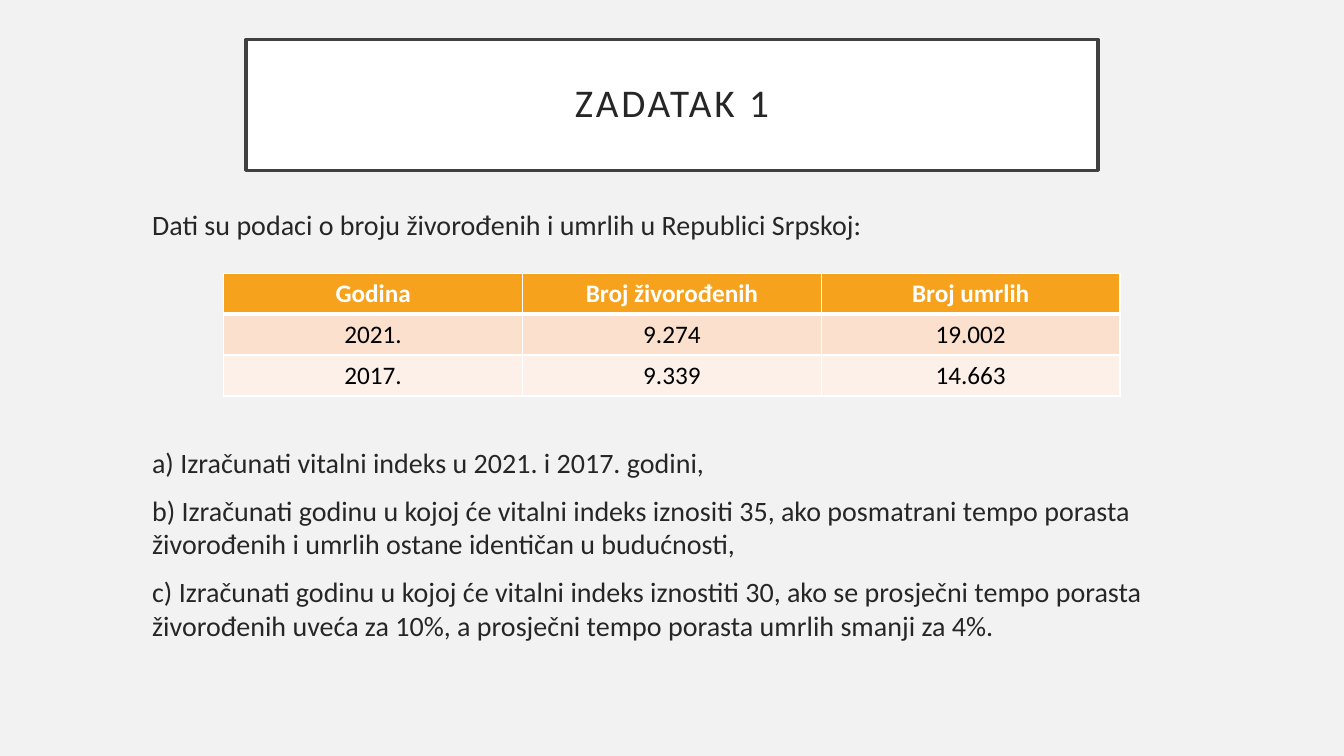
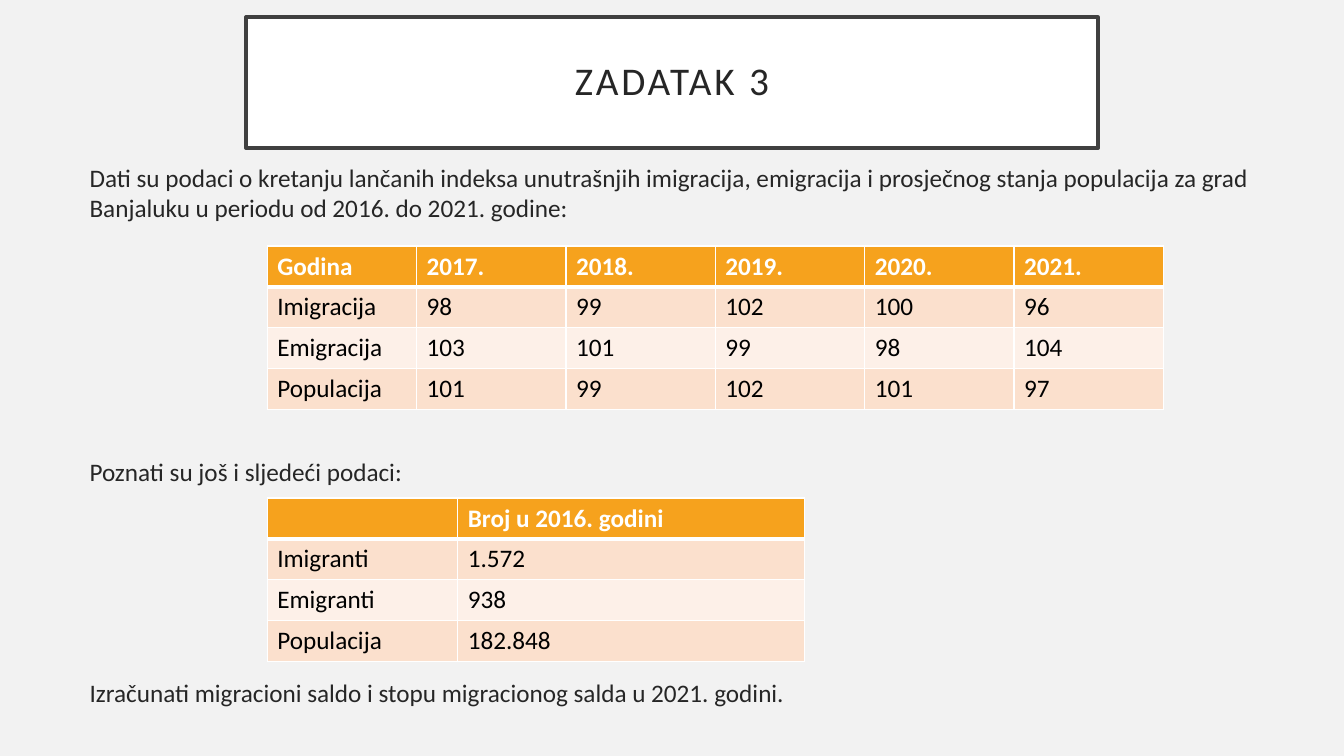
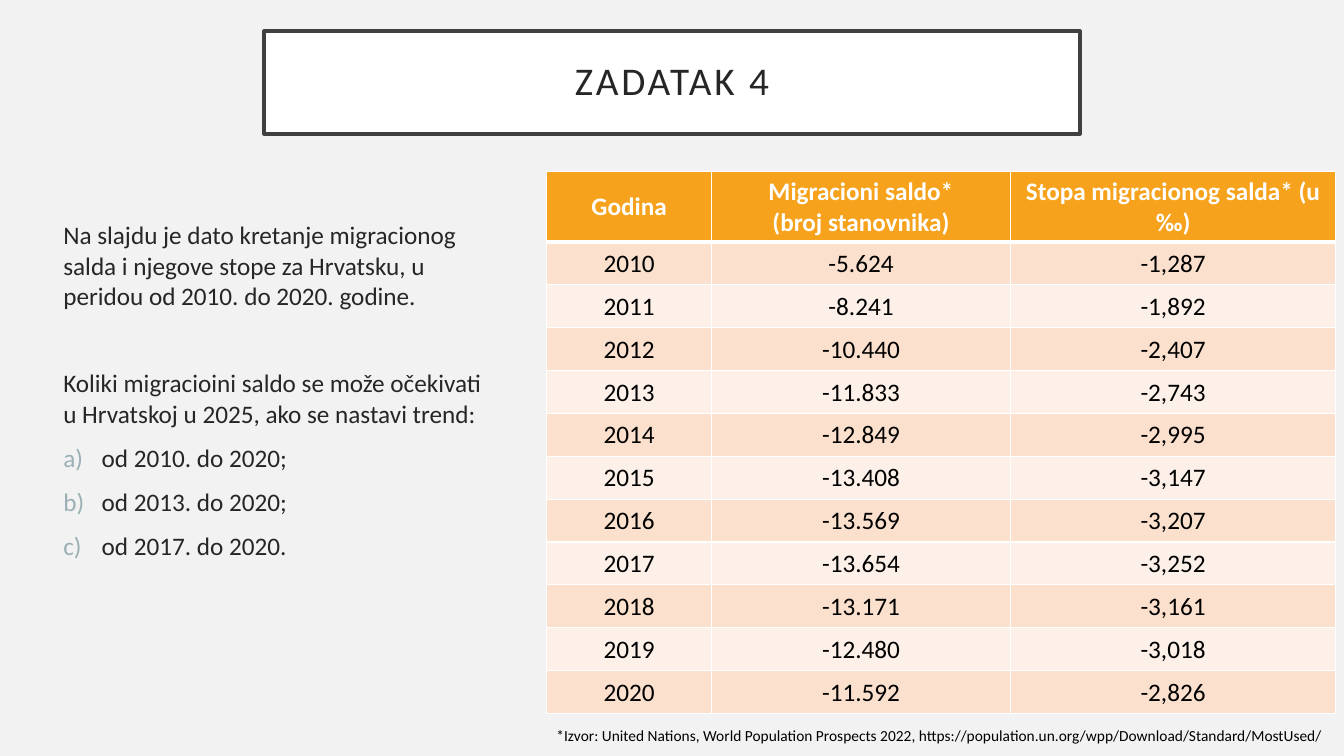
import pptx
import pptx.dml.color
import pptx.enum.shapes
import pptx.enum.text
import pptx.oxml.ns
import pptx.util
from dataclasses import dataclass
from lxml import etree

Inches = pptx.util.Inches
Pt = pptx.util.Pt
ALIGN = pptx.enum.text.PP_ALIGN
ANCHOR = pptx.enum.text.MSO_ANCHOR


@dataclass(frozen=True)
class Theme:
    font: str = "Calibri"
    background: str = "F2F2F2"
    white: str = "FFFFFF"
    frame: str = "404040"
    ink: str = "262626"
    black: str = "000000"
    marker: str = "9BAFB5"
    header: str = "F6A21D"
    bands: tuple = ("FBE0CD", "FDF0E8")
    title_size: int = 28
    large_size: int = 20
    text_size: int = 18
    note_size: int = 11
    gap: int = 10
    indent: float = 0.38
    cell_insets: tuple = (0.1, 0.05, 0.1, 0.05)
    tight_insets: tuple = (0.01, 0.01, 0.01, 0)


THEME = Theme()

TASKS = [
    {
        "title": ("ZADATAK 1", (2.44, 0.39, 8.45, 1.3)),
        "body": {
            "box": (1.41, 2.01, 10.52, 5.1),
            "size": THEME.large_size,
            "lines": [
                ("Dati su podaci o broju živorođenih i umrlih u Republici Srpskoj:", {}),
                ("a) Izračunati vitalni indeks u 2021. i 2017. godini,", {"before": 146}),
                ("b) Izračunati godinu u kojoj će vitalni indeks iznositi 35, ako posmatrani "
                 "tempo porasta živorođenih i umrlih ostane identičan u budućnosti,", {}),
                ("c) Izračunati godinu u kojoj će vitalni indeks iznostiti 30, ako se prosječni "
                 "tempo porasta živorođenih uveća za 10%, a prosječni tempo porasta umrlih "
                 "smanji za 4%.", {}),
            ],
        },
        "tables": [
            {
                "corner": (2.22, 2.71),
                "columns": [8.89 / 3] * 3,
                "height": 1.22,
                "align": ALIGN.CENTER,
                "rows": [
                    ("Godina", "Broj živorođenih", "Broj umrlih"),
                    ("2021.", "9.274", "19.002"),
                    ("2017.", "9.339", "14.663"),
                ],
            },
        ],
    },
    {
        "title": ("ZADATAK 3", (2.44, 0.17, 8.45, 1.3)),
        "body": {
            "box": (0.79, 1.56, 12.13, 5.58),
            "size": THEME.text_size,
            "lines": [
                ("Dati su podaci o kretanju lančanih indeksa unutrašnjih imigracija, emigracija "
                 "i prosječnog stanja populacija za grad Banjaluku u periodu od 2016. do 2021. "
                 "godine:", {}),
                ("Poznati su još i sljedeći podaci:", {"before": 167}),
                ("Izračunati migracioni saldo i stopu migracionog salda u 2021. godini.",
                 {"before": 136}),
            ],
        },
        "tables": [
            {
                "corner": (2.65, 2.44),
                "columns": [8.89 / 6] * 6,
                "height": 1.62,
                "rows": [
                    ("Godina", "2017.", "2018.", "2019.", "2020.", "2021."),
                    ("Imigracija", "98", "99", "102", "100", "96"),
                    ("Emigracija", "103", "101", "99", "98", "104"),
                    ("Populacija", "101", "99", "102", "101", "97"),
                ],
            },
            {
                "corner": (2.65, 4.94),
                "columns": [1.89, 3.44],
                "height": 1.62,
                "rows": [
                    ("", "Broj u 2016. godini"),
                    ("Imigranti", "1.572"),
                    ("Emigranti", "938"),
                    ("Populacija", "182.848"),
                ],
            },
        ],
    },
    {
        "title": ("ZADATAK 4", (2.62, 0.31, 8.09, 1.02)),
        "body": {
            "box": (0.53, 2.13, 4.53, 4.94),
            "size": THEME.text_size,
            "lines": [
                ("Na slajdu je dato kretanje migracionog salda i njegove stope za Hrvatsku, "
                 "u peridou od 2010. do 2020. godine.", {}),
                ("Koliki migracioini saldo se može očekivati u Hrvatskoj u 2025, ako se nastavi "
                 "trend:", {"before": 41}),
                ("od 2010. do 2020;", {"lettered": True}),
                ("od 2013. do 2020;", {"lettered": True}),
                ("od 2017. do 2020.", {"lettered": True}),
            ],
        },
        "tables": [
            {
                "corner": (5.42, 1.7),
                "columns": [1.64, 2.96, 3.23],
                "height": 5.38,
                "header_height": 0.7,
                "align": ALIGN.CENTER,
                "anchor": ANCHOR.MIDDLE,
                "insets": THEME.tight_insets,
                "rows": [
                    ("Godina", "Migracioni saldo*\n(broj stanovnika)",
                     "Stopa migracionog salda* (u ‰)"),
                    ("2010", "-5.624", "-1,287"),
                    ("2011", "-8.241", "-1,892"),
                    ("2012", "-10.440", "-2,407"),
                    ("2013", "-11.833", "-2,743"),
                    ("2014", "-12.849", "-2,995"),
                    ("2015", "-13.408", "-3,147"),
                    ("2016", "-13.569", "-3,207"),
                    ("2017", "-13.654", "-3,252"),
                    ("2018", "-13.171", "-3,161"),
                    ("2019", "-12.480", "-3,018"),
                    ("2020", "-11.592", "-2,826"),
                ],
            },
        ],
        "source": ("*Izvor: United Nations, World Population Prospects 2022, "
                   "https://population.un.org/wpp/Download/Standard/MostUsed/",
                   (5.42, 7.15, 7.82, 0.3)),
    },
]


def rgb(value):
    return pptx.dml.color.RGBColor.from_string(value)


def inches(values):
    return [Inches(value) for value in values]


def apply(target, values):
    for name, value in values.items():
        setattr(target, name, value)


def set_insets(target, insets):
    sides = ("margin_left", "margin_top", "margin_right", "margin_bottom")
    apply(target, dict(zip(sides, inches(insets))))


def paint(target, color):
    target.fill.solid()
    target.fill.fore_color.rgb = rgb(color)


def sub(parent, tag, **attributes):
    return etree.SubElement(parent, pptx.oxml.ns.qn(tag), attributes)


def write(paragraph, text, size, color, bold=False, **layout):
    apply(paragraph, layout)
    if not text:
        return None
    run = paragraph.add_run()
    run.text = text
    apply(run.font, {"name": THEME.font, "size": Pt(size), "bold": bold})
    run.font.color.rgb = rgb(color)
    return run


def paragraphs(frame, count):
    return [frame.paragraphs[0]] + [frame.add_paragraph() for _ in range(count - 1)]


def add_title(slide, text, box):
    title = slide.shapes.add_shape(pptx.enum.shapes.MSO_SHAPE.RECTANGLE, *inches(box))
    title.shadow.inherit = False
    paint(title, THEME.white)
    title.line.color.rgb = rgb(THEME.frame)
    title.line.width = Pt(2.5)
    frame = title.text_frame
    apply(frame, {"word_wrap": True, "vertical_anchor": ANCHOR.MIDDLE})
    set_insets(frame, (0.2,) * 4)
    run = write(frame.paragraphs[0], text, THEME.title_size, THEME.ink,
                alignment=ALIGN.CENTER, line_spacing=0.9)
    run._r.get_or_add_rPr().set("spc", "200")


def add_letter(paragraph):
    properties = paragraph._p.get_or_add_pPr()
    properties.set("marL", str(Inches(THEME.indent)))
    properties.set("indent", str(-Inches(THEME.indent)))
    sub(sub(properties, "a:buClr"), "a:srgbClr", val=THEME.marker)
    sub(properties, "a:buAutoNum", type="alphaLcParenR")


def add_body(slide, box, size, lines):
    frame = slide.shapes.add_textbox(*inches(box)).text_frame
    frame.word_wrap = True
    for paragraph, (text, style) in zip(paragraphs(frame, len(lines)), lines):
        write(paragraph, text, size, THEME.ink,
              space_before=Pt(style.get("before", THEME.gap)))
        if style.get("lettered"):
            add_letter(paragraph)


def add_borders(cell, row):
    widths = {"L": 1, "R": 1, "T": 3 if row == 1 else 1, "B": 3 if row == 0 else 1}
    properties = cell._tc.get_or_add_tcPr()
    for side, width in widths.items():
        border = sub(properties, f"a:ln{side}", w=str(Pt(width)))
        sub(sub(border, "a:solidFill"), "a:srgbClr", val=THEME.white)


def add_data_table(slide, corner, columns, height, rows, header_height=None,
                   align=ALIGN.LEFT, anchor=ANCHOR.TOP, insets=THEME.cell_insets):
    header_height = header_height or height / len(rows)
    row_height = (height - header_height) / (len(rows) - 1)
    table = slide.shapes.add_table(
        len(rows), len(columns), *inches((*corner, sum(columns), height))).table
    apply(table, {"first_row": False, "horz_banding": False})
    for column, width in zip(table.columns, columns):
        column.width = Inches(width)
    for r, values in enumerate(rows):
        is_header = r == 0
        table.rows[r].height = Inches(header_height if is_header else row_height)
        for c, value in enumerate(values):
            cell = table.cell(r, c)
            add_borders(cell, r)
            paint(cell, THEME.header if is_header else THEME.bands[(r - 1) % 2])
            cell.vertical_anchor = anchor
            set_insets(cell, THEME.cell_insets if is_header else insets)
            lines = value.split("\n")
            for paragraph, line in zip(paragraphs(cell.text_frame, len(lines)), lines):
                write(paragraph, line, THEME.text_size,
                      THEME.white if is_header else THEME.black,
                      bold=is_header, alignment=align)


def add_source(slide, text, box):
    frame = slide.shapes.add_textbox(*inches(box)).text_frame
    apply(frame, {"word_wrap": True,
                  "auto_size": pptx.enum.text.MSO_AUTO_SIZE.SHAPE_TO_FIT_TEXT})
    write(frame.paragraphs[0], text, THEME.note_size, THEME.black)


def main():
    deck = pptx.Presentation()
    apply(deck, {"slide_width": Inches(13.33), "slide_height": Inches(7.5)})
    for task in TASKS:
        slide = deck.slides.add_slide(deck.slide_layouts[6])
        paint(slide.background, THEME.background)
        add_title(slide, *task["title"])
        add_body(slide, **task["body"])
        for table in task["tables"]:
            add_data_table(slide, **table)
        if "source" in task:
            add_source(slide, *task["source"])
    deck.save("out.pptx")


if __name__ == "__main__":
    main()
